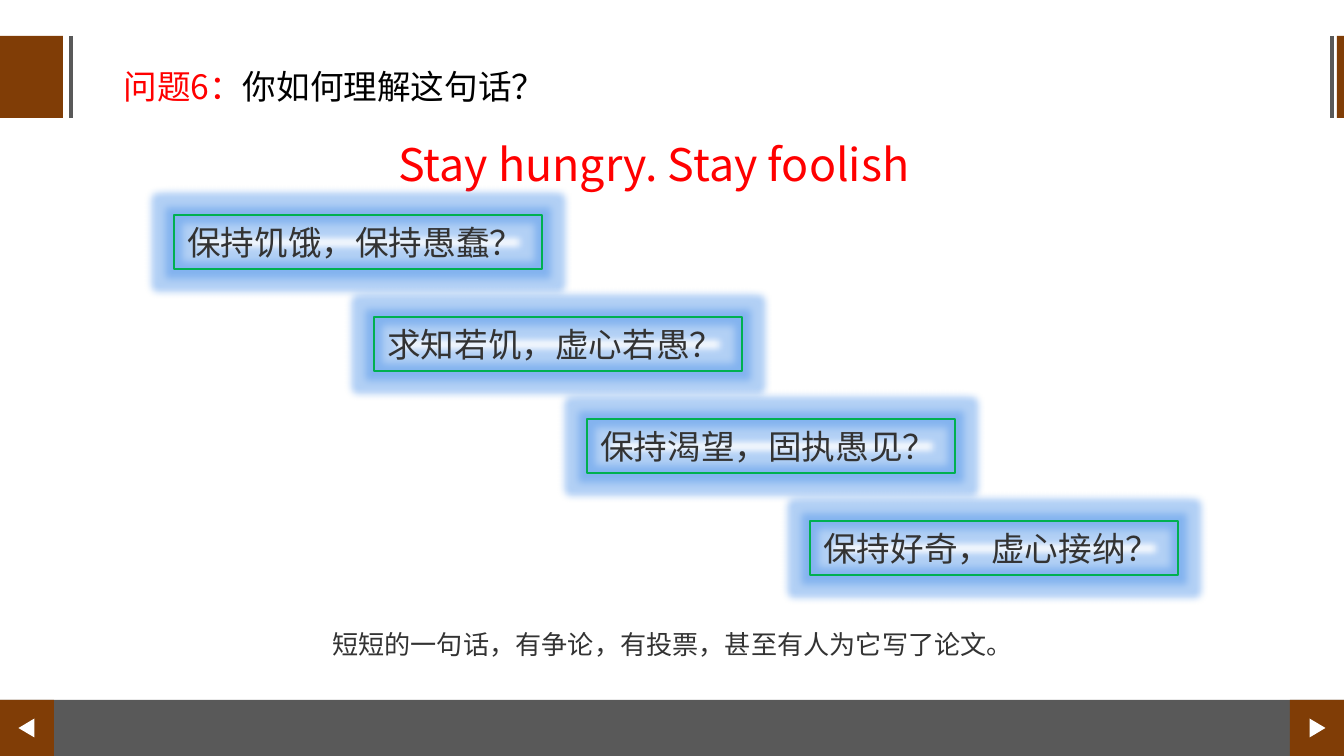
from dataclasses import dataclass

from lxml.etree import SubElement
from pptx import Presentation
from pptx.dml.color import RGBColor
from pptx.enum.shapes import MSO_CONNECTOR as CONN, MSO_SHAPE as SHAPE
from pptx.enum.text import MSO_ANCHOR as ANCHOR, PP_ALIGN as ALIGN
from pptx.oxml.ns import qn
from pptx.util import Pt

EMU_PER_PX = 9144000 / 1344


@dataclass(frozen=True)
class Theme:
    font: str = "Noto Sans CJK SC"
    brown: str = "803D06"
    gray: str = "595959"
    white: str = "FFFFFF"
    red: str = "FF0000"
    black: str = "000000"
    ink: str = "333333"
    green: str = "00B050"
    glow: str = "3F8AE8"
    quote: int = 24
    body: int = 18
    note: int = 14


def px(n):
    return round(n * EMU_PER_PX)


def rgb(code):
    return RGBColor.from_string(code)


def add_run(p, text, *, size, color, font):
    r = p.add_run()
    r.text = text
    r.font.size = Pt(size)
    r.font.name = font
    r.font.color.rgb = rgb(color)
    SubElement(r.font._element, qn("a:ea"), typeface=font)


class Deck:
    def __init__(self, theme):
        self.t = theme
        self.prs = Presentation()
        self.prs.slide_width, self.prs.slide_height = px(1344), px(756)
        self.s = self.prs.slides.add_slide(self.prs.slide_layouts[5])

    def fill_text(self, sp, *runs, size, align=ALIGN.LEFT, anchor=ANCHOR.MIDDLE):
        tf = sp.text_frame
        tf.word_wrap = True
        tf.vertical_anchor = anchor
        p = tf.paragraphs[0]
        p.alignment = align
        for text, color in runs:
            add_run(p, text, size=size, color=color, font=self.t.font)
        return p

    def title(self, x, y, w, h, *runs):
        sp = self.s.shapes.title
        sp.left, sp.top, sp.width, sp.height = map(px, (x, y, w, h))
        p = self.fill_text(sp, *runs, size=self.t.body, anchor=ANCHOR.TOP)
        p.line_spacing = 0.8

    def text(self, x, y, w, h, text, *, size, color):
        sp = self.s.shapes.add_textbox(*map(px, (x, y, w, h)))
        self.fill_text(sp, (text, color), size=size, align=ALIGN.CENTER)

    def block(self, x, y, w, h, fill, *, kind=SHAPE.RECTANGLE, turn=0):
        sp = self.s.shapes.add_shape(kind, *map(px, (x, y, w, h)))
        sp.shadow.inherit = False
        sp.fill.solid()
        sp.fill.fore_color.rgb = rgb(fill)
        sp.line.fill.background()
        sp.rotation = turn

    def rule(self, x, top, bottom):
        c = self.s.shapes.add_connector(
            CONN.STRAIGHT, px(x), px(top), px(x), px(bottom))
        c.line.color.rgb = rgb(self.t.gray)
        c.line.width = Pt(2.25)
        SubElement(c._element.spPr, qn("a:effectLst"))

    def answer(self, x, y, w, h, text):
        sp = self.s.shapes.add_shape(SHAPE.RECTANGLE, *map(px, (x, y, w, h)))
        sp.shadow.inherit = False
        sp.fill.background()
        sp.line.color.rgb = rgb(self.t.green)
        sp.line.width = Pt(0.75)
        effects = sp._element.spPr.find(qn("a:effectLst"))
        glow = SubElement(effects, qn("a:glow"), rad=str(Pt(8)))
        color = SubElement(glow, qn("a:srgbClr"), val=self.t.glow)
        SubElement(color, qn("a:alpha"), val="40000")
        self.fill_text(sp, (text, self.t.ink), size=self.t.body)


def main():
    t = Theme()
    deck = Deck(t)

    deck.block(0, 700, 1344, 56, t.gray)
    for x, arrow_x, turn in ((1290, 1308, 90), (0, 17, 270)):
        deck.block(x, 700, 54, 56, t.brown)
        deck.block(arrow_x, 720, 19, 16, t.white,
                   kind=SHAPE.ISOSCELES_TRIANGLE, turn=turn)

    for x, w, rule_x in ((1337, 7, 1332), (0, 63, 71)):
        deck.block(x, 36, w, 82, t.brown)
        deck.rule(rule_x, 36, 118)

    deck.title(110, 67, 454, 54,
               ("问题6：", t.red), ("你如何理解这句话？", t.black))
    deck.text(375, 130, 558, 67, "Stay hungry. Stay foolish",
              size=t.quote, color=t.red)

    answers = (
        (174, "保持饥饿，保持愚蠢？"),
        (374, "求知若饥，虚心若愚？"),
        (587, "保持渴望，固执愚见？"),
        (810, "保持好奇，虚心接纳？"),
    )
    for i, (x, text) in enumerate(answers):
        deck.answer(x, 215 + 102 * i, 368, 54, text)

    deck.text(191, 621, 964, 46,
              "短短的一句话，有争论，有投票，甚至有人为它写了论文。",
              size=t.note, color=t.ink)
    deck.prs.save("out.pptx")


if __name__ == "__main__":
    main()
